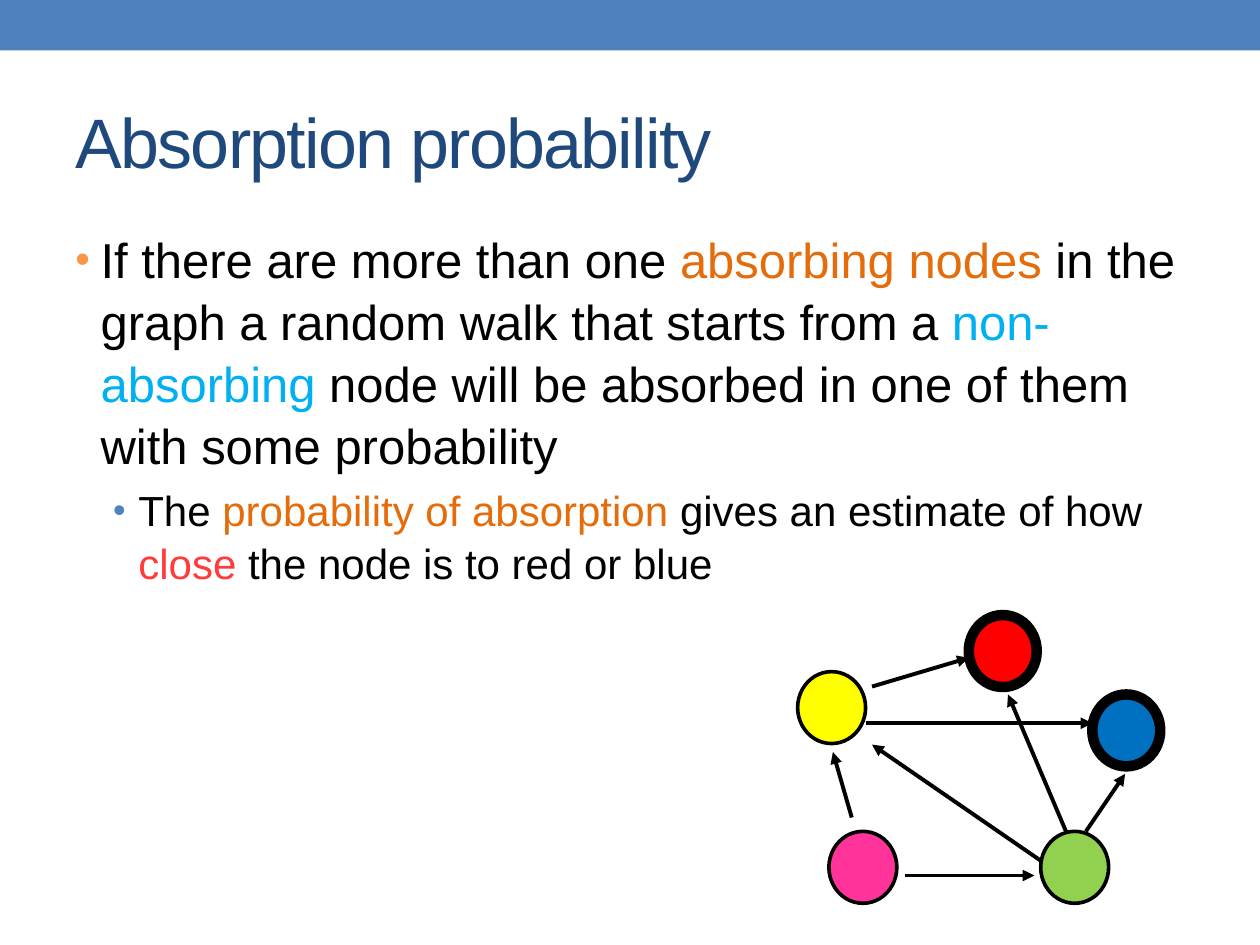
import pptx
import pptx.util
import pptx.dml.color
import pptx.enum.shapes
import pptx.enum.text
import pptx.oxml
from pptx.oxml.ns import qn

Cm, Pt = pptx.util.Cm, pptx.util.Pt
RGB = pptx.dml.color.RGBColor
SHAPE = pptx.enum.shapes.MSO_SHAPE
BLACK = RGB(0, 0, 0)
WHITE = RGB(0xFF, 0xFF, 0xFF)
BAR = RGB(0x4F, 0x81, 0xBD)
NAVY = RGB(0x1F, 0x49, 0x7D)
BULLET = RGB(0xF7, 0x96, 0x46)
ORANGE = RGB(0xE4, 0x6C, 0x0A)
CYAN = RGB(0x00, 0xB0, 0xF0)
CORAL = RGB(0xFF, 0x3B, 0x3B)
RED = RGB(0xFF, 0, 0)
BLUE = RGB(0, 0x70, 0xC0)
GREEN = RGB(0x92, 0xD0, 0x50)
PINK = RGB(0xFF, 0x33, 0x99)
YELLOW = RGB(0xFF, 0xFF, 0)


def add_run(p, text, size=28, color=BLACK, spacing=None):
    r = p.add_run()
    r.text = text
    r.font.name = "Arial"
    r.font.size = Pt(size)
    r.font.color.rgb = color
    if spacing is not None:
        r._r.get_or_add_rPr().set("spc", str(spacing))


def add_bullet(p, indent, color):
    pPr = p._p.get_or_add_pPr()
    pPr.set("marL", str(Cm(indent)))
    pPr.set("indent", str(-Cm(0.51)))
    for tag, attr in (("buClr", ""), ("buSzPct", 'val="85000"'),
                      ("buFont", 'typeface="Arial"'), ("buChar", 'char="•"')):
        inner = f'<a:srgbClr val="{color}"/>' if tag == "buClr" else ""
        pPr.append(pptx.oxml.parse_xml(
            f'<a:{tag} xmlns:a="http://schemas.openxmlformats.org/drawingml/2006/main" {attr}>'
            f'{inner}</a:{tag}>'))


prs = pptx.Presentation()
prs.slide_width, prs.slide_height = Cm(25.4), Cm(19.05)
s = prs.slides.add_slide(prs.slide_layouts[5])
s.background.fill.solid()
s.background.fill.fore_color.rgb = WHITE

# Top bar
bar = s.shapes.add_shape(SHAPE.RECTANGLE, 0, 0, prs.slide_width, Cm(1.02))
bar.shadow.inherit = False
bar.fill.solid()
bar.fill.fore_color.rgb = BAR
bar.line.fill.background()

# Title
title = s.shapes.title
title.left, title.top, title.width, title.height = Cm(1.27), Cm(1.47), Cm(22.86), Cm(2.74)
tf = title.text_frame
tf.vertical_anchor = pptx.enum.text.MSO_ANCHOR.MIDDLE
p = tf.paragraphs[0]
p.alignment = pptx.enum.text.PP_ALIGN.LEFT
add_run(p, "Absorption probability", size=40, color=NAVY, spacing=-100)

# Body text: indent, bullet colour, size, runs
paragraphs = [
    (0.51, BULLET, 28, [
        ("If there are more than one ", BLACK), ("absorbing nodes ", ORANGE),
        ("in the graph a random walk that starts from a ", BLACK),
        ("non-absorbing", CYAN),
        (" node will be absorbed in one of them with some probability", BLACK)]),
    (1.27, BAR, 24, [
        ("The ", BLACK), ("probability of absorption ", ORANGE),
        ("gives an estimate of how ", BLACK), ("close ", CORAL),
        ("the node is to red or blue", BLACK)]),
]
tf = s.shapes.add_textbox(Cm(1.27), Cm(4.45), Cm(22.86), Cm(13.54)).text_frame
tf.word_wrap = True
for i, (indent, color, size, runs) in enumerate(paragraphs):
    p = tf.add_paragraph() if i else tf.paragraphs[0]
    p.level = i
    p.line_spacing = 1.05
    p.space_before = Pt(size * 0.2)
    add_bullet(p, indent, color)
    for text, run_color in runs:
        add_run(p, text, size=size, color=run_color)

# Arrows between the nodes: start x, y, end x, y
arrows = [
    (18.24, 17.65, 20.85, 17.65), (17.17, 16.48, 16.79, 15.16),
    (17.58, 13.84, 19.53, 13.26), (17.45, 14.58, 22.02, 14.58),
    (21.49, 16.76, 20.32, 14), (21.89, 16.76, 22.68, 15.6),
    (20.98, 17.35, 17.58, 15.01),
]
for ends in arrows:
    c = s.shapes.add_connector(pptx.enum.shapes.MSO_CONNECTOR.STRAIGHT,
                               *(Cm(v) for v in ends))
    c.line.color.rgb = BLACK
    c.line.width = Pt(2.25)
    ln = c.line._get_or_add_ln()
    ln.append(ln.makeelement(qn("a:tailEnd"), {"type": "triangle"}))
    spPr = c._element.spPr
    spPr.append(spPr.makeelement(qn("a:effectLst"), {}))

# Graph nodes; the absorbing ones have a thick outline
nodes = [
    (19.53, 12.4, RED, 6), (22.02, 14, BLUE, 6), (20.98, 16.76, GREEN, 2.08),
    (16.71, 16.76, PINK, 2.08), (16.08, 13.54, YELLOW, 2.08),
]
for x, y, color, width in nodes:
    node = s.shapes.add_shape(SHAPE.OVAL, Cm(x), Cm(y), Cm(1.37), Cm(1.45))
    node.shadow.inherit = False
    node.fill.solid()
    node.fill.fore_color.rgb = color
    node.line.color.rgb = BLACK
    node.line.width = Pt(width)

prs.save("out.pptx")
